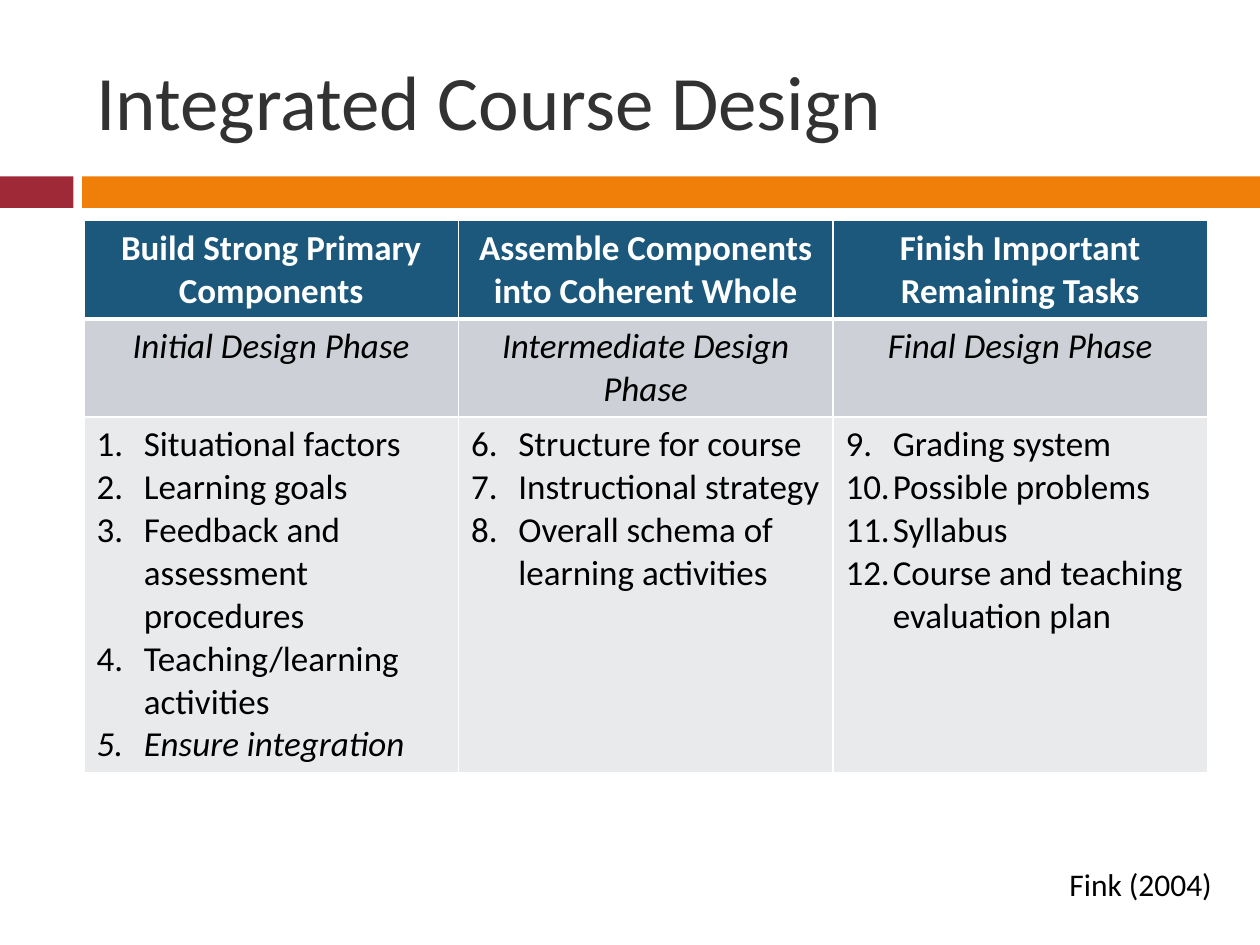
from dataclasses import dataclass

from lxml import etree
from pptx import Presentation
from pptx.dml.color import RGBColor
from pptx.enum import shapes, text
from pptx.oxml import ns
from pptx.util import Pt


@dataclass(frozen=True)
class Theme:
    """Colours, font and type sizes of the slide."""
    font: str = "Calibri"
    title_size: float = 44
    table_size: float = 20
    credit_size: float = 18
    title: str = "323232"
    ink: str = "000000"
    paper: str = "FFFFFF"
    accent: str = "9F2936"
    band: str = "F07F09"
    heading_fill: str = "1B587C"
    phase_fill: str = "CDD1D7"
    tasks_fill: str = "E8EAEC"


THEME = Theme()
INDENT = 27
ROW_HEIGHTS = (56, 56, 202)
STAGES = [
    ("Build Strong Primary Components", "Initial Design Phase", 1,
     ["Situational factors", "Learning goals",
      "Feedback and assessment procedures",
      "Teaching/learning activities", "Ensure integration"]),
    ("Assemble Components into Coherent Whole", "Intermediate Design Phase", 6,
     ["Structure for course", "Instructional strategy",
      "Overall schema of learning activities"]),
    ("Finish Important Remaining Tasks", "Final Design Phase", 9,
     ["Grading system", "Possible problems", "Syllabus",
      "Course and teaching evaluation plan"]),
]
EMPHASIZED = "Ensure integration"


def style(paragraph, size, color, bold=False, italic=False):
    """Format every run of a paragraph."""
    for run in paragraph.runs:
        font = run.font
        font.name, font.size = THEME.font, Pt(size)
        font.bold, font.italic = bold, italic
        font.color.rgb = RGBColor.from_string(color)


def number(paragraph, start):
    """Give a paragraph automatic numbering with a hanging indent."""
    properties = paragraph._p.get_or_add_pPr()
    properties.set("marL", str(Pt(INDENT)))
    properties.set("indent", str(Pt(-INDENT)))
    numbering = etree.SubElement(properties, ns.qn("a:buAutoNum"), type="arabicPeriod")
    if start > 1:
        numbering.set("startAt", str(start))


def paint_cell(cell, fill, top=1, bottom=1):
    """Set the borders and fill of a table cell."""
    properties = cell._tc.get_or_add_tcPr()
    for side, width in (("L", 1), ("R", 1), ("T", top), ("B", bottom)):
        line = etree.SubElement(properties, ns.qn(f"a:ln{side}"), w=str(Pt(width)))
        solid = etree.SubElement(line, ns.qn("a:solidFill"))
        etree.SubElement(solid, ns.qn("a:srgbClr"), val=THEME.paper)
    cell.fill.solid()
    cell.fill.fore_color.rgb = RGBColor.from_string(fill)


def add_title(slide, left, top, width, height):
    """Place and format the slide title."""
    title = slide.shapes.title
    title.left, title.top, title.width, title.height = map(Pt, (left, top, width, height))
    frame = title.text_frame
    frame.text = "Integrated Course Design"
    frame.auto_size = text.MSO_AUTO_SIZE.NONE
    frame.vertical_anchor = text.MSO_ANCHOR.MIDDLE
    frame.paragraphs[0].alignment = text.PP_ALIGN.LEFT
    style(frame.paragraphs[0], THEME.title_size, THEME.title)


def add_divider(slide, left, top, width, height):
    """Draw the two-colour band below the title."""
    accent_width, gap = 42, 5
    band_left = accent_width + gap
    for offset, length, color in ((0, accent_width, THEME.accent),
                                  (band_left, width - band_left, THEME.band)):
        bar = slide.shapes.add_shape(shapes.MSO_SHAPE.RECTANGLE, Pt(left + offset),
                                     Pt(top), Pt(length), Pt(height))
        bar.shadow.inherit = False
        bar.fill.solid()
        bar.fill.fore_color.rgb = RGBColor.from_string(color)
        bar.line.fill.background()


def add_stages(slide, left, top, width):
    """Build the table with one column for each design stage."""
    stages = slide.shapes.add_table(len(ROW_HEIGHTS), len(STAGES), Pt(left), Pt(top),
                                    Pt(width), Pt(sum(ROW_HEIGHTS))).table
    for row, height in zip(stages.rows, ROW_HEIGHTS):
        row.height = Pt(height)
    for column, (heading, phase, start, tasks) in enumerate(STAGES):
        stages.columns[column].width = Pt(width / len(STAGES))
        heading_cell, phase_cell, tasks_cell = (
            stages.cell(row, column) for row in range(len(ROW_HEIGHTS)))
        paint_cell(heading_cell, THEME.heading_fill, bottom=3)
        paint_cell(phase_cell, THEME.phase_fill, top=3)
        paint_cell(tasks_cell, THEME.tasks_fill)
        for cell, label, color, is_heading in (
                (heading_cell, heading, THEME.paper, True),
                (phase_cell, phase, THEME.ink, False)):
            cell.text_frame.text = label
            paragraph = cell.text_frame.paragraphs[0]
            paragraph.alignment = text.PP_ALIGN.CENTER
            style(paragraph, THEME.table_size, color, is_heading, not is_heading)
        tasks_cell.text_frame.text = "\n".join(tasks)
        for paragraph in tasks_cell.text_frame.paragraphs:
            number(paragraph, start)
            style(paragraph, THEME.table_size, THEME.ink,
                  italic=paragraph.text == EMPHASIZED)


def add_credit(slide, left, top, width, height):
    """Place the source of the design model."""
    credit = slide.shapes.add_textbox(Pt(left), Pt(top), Pt(width), Pt(height))
    frame = credit.text_frame
    frame.text = "Fink (2004)"
    frame.word_wrap = False
    frame.auto_size = text.MSO_AUTO_SIZE.SHAPE_TO_FIT_TEXT
    style(frame.paragraphs[0], THEME.credit_size, THEME.ink)


def main():
    """Build and save the presentation."""
    deck = Presentation()
    deck.slide_width, deck.slide_height = Pt(720), Pt(540)
    slide = deck.slides.add_slide(deck.slide_layouts.get_by_name("Title Only"))
    add_divider(slide, 0, 100.8, 720, 18)
    add_title(slide, 48, 18, 642, 78)
    add_stages(slide, 48, 126, 642)
    add_credit(slide, 604, 491, 97, 29)
    deck.save("out.pptx")


if __name__ == "__main__":
    main()
